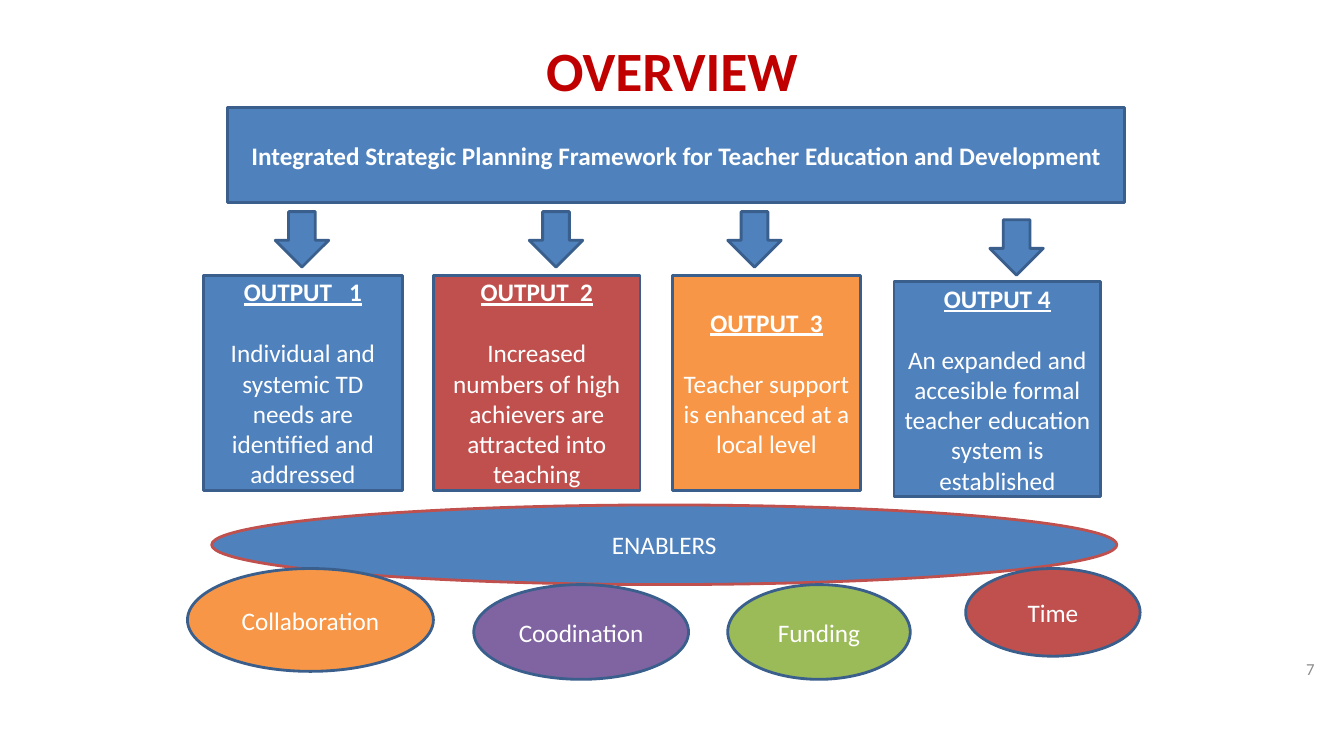
from pptx import Presentation
from pptx import util as u
from pptx.dml.color import RGBColor
from pptx.enum import shapes, text

WHITE = RGBColor(0xFF, 0xFF, 0xFF)
CRIMSON = RGBColor(0xC0, 0x00, 0x00)
GREY = RGBColor(0x8C, 0x8C, 0x8C)
NAVY = RGBColor(0x3A, 0x5F, 0x8C)
BLUE = RGBColor(0x4F, 0x81, 0xBD)
RED = RGBColor(0xC0, 0x50, 0x4D)
ORANGE = RGBColor(0xF7, 0x96, 0x46)
PURPLE = RGBColor(0x80, 0x64, 0xA2)
GREEN = RGBColor(0x9B, 0xBB, 0x59)

RECTANGLE = shapes.MSO_SHAPE.RECTANGLE
OVAL = shapes.MSO_SHAPE.OVAL
ARROW = shapes.MSO_SHAPE.DOWN_ARROW


def write(paragraph, words, size=18, color=WHITE, bold=False, underline=False,
          align=text.PP_ALIGN.CENTER, before=0):
    paragraph.alignment = align
    paragraph.space_before = u.Pt(before)
    run = paragraph.add_run()
    run.text = words
    font = run.font
    font.name, font.size = "Calibri", u.Pt(size)
    font.bold, font.underline = bold, underline
    font.color.rgb = color


class Board:
    """Places elements on a grid of 100 columns by 100 rows."""

    def __init__(self, presentation):
        self.slide = presentation.slides.add_slide(presentation.slide_layouts[5])
        self.column = presentation.slide_width / 100
        self.row = presentation.slide_height / 100

    def area(self, left, top, width, height):
        return (round(left * self.column), round(top * self.row),
                round(width * self.column), round(height * self.row))

    def frame(self, shape):
        frame = shape.text_frame
        frame.word_wrap = True
        frame.auto_size = text.MSO_AUTO_SIZE.NONE
        frame.vertical_anchor = text.MSO_ANCHOR.MIDDLE
        return frame

    def title(self, words, *place):
        shape = self.slide.shapes.title
        shape.left, shape.top, shape.width, shape.height = self.area(*place)
        write(self.frame(shape).paragraphs[0], words, size=39.6,
              color=CRIMSON, bold=True)

    def label(self, words, *place, **style):
        shape = self.slide.shapes.add_textbox(*self.area(*place))
        write(self.frame(shape).paragraphs[0], words, **style)

    def block(self, kind, fill, *place, line=NAVY, words=None, **style):
        shape = self.slide.shapes.add_shape(kind, *self.area(*place))
        shape.shadow.inherit = False
        shape.fill.solid()
        shape.fill.fore_color.rgb = fill
        shape.line.color.rgb = line
        shape.line.width = u.Pt(2)
        if words:
            write(self.frame(shape).paragraphs[0], words, **style)
        return shape

    def output(self, heading, description, fill, *place):
        shape = self.block(RECTANGLE, fill, *place, words=heading,
                           bold=True, underline=True)
        write(shape.text_frame.add_paragraph(), description, before=22)


def main():
    presentation = Presentation()
    presentation.slide_width = u.Inches(13.33)
    presentation.slide_height = u.Inches(7.5)
    board = Board(presentation)

    # Title and slide number
    board.title("OVERVIEW", 5, 4, 90, 10.27)
    board.label("7", 75.23, 85.73, 23.32, 5.33, size=12, color=GREY,
                align=text.PP_ALIGN.RIGHT)

    # Framework banner
    board.block(RECTANGLE, BLUE, 16.95, 14.27, 66.75, 12.53, bold=True,
                words="Integrated Strategic Planning Framework for "
                      "Teacher Education and Development")

    # Outputs, each under its arrow
    outputs = [
        ("OUTPUT   1", "Individual and systemic TD needs are identified and addressed",
         BLUE, 15.15, 36.4, 14.78, 20.48, 28),
        ("OUTPUT  2", "Increased numbers of high achievers are attracted into teaching",
         RED, 32.25, 36.4, 15.38, 39.38, 28),
        ("OUTPUT  3", "Teacher support is enhanced at a local level",
         ORANGE, 50.02, 36.4, 14.02, 54.15, 28),
        ("OUTPUT 4", "An expanded and accesible formal teacher education system is established",
         BLUE, 66.52, 37.25, 15.38, 73.65, 29.07),
    ]
    for heading, description, fill, left, top, width, arrow_left, arrow_top in outputs:
        board.output(heading, description, fill, left, top, width, 28.45)
        board.block(ARROW, BLUE, arrow_left, arrow_top, 3.98, 7.33)

    # Enablers
    board.block(OVAL, BLUE, 15.75, 66.8, 67.35, 10.53, line=RED, words="ENABLERS")
    enablers = [
        ("Collaboration", ORANGE, 13.95, 75.2, 18.3, 13.6),
        ("Coodination", PURPLE, 35.25, 77.33, 15.98, 12.53),
        ("Funding", GREEN, 54.15, 77.33, 13.58, 12.53),
        ("Time", RED, 71.85, 75.2, 12.98, 11.6),
    ]
    for name, fill, *place in enablers:
        board.block(OVAL, fill, *place, words=name)

    presentation.save("out.pptx")


if __name__ == "__main__":
    main()
